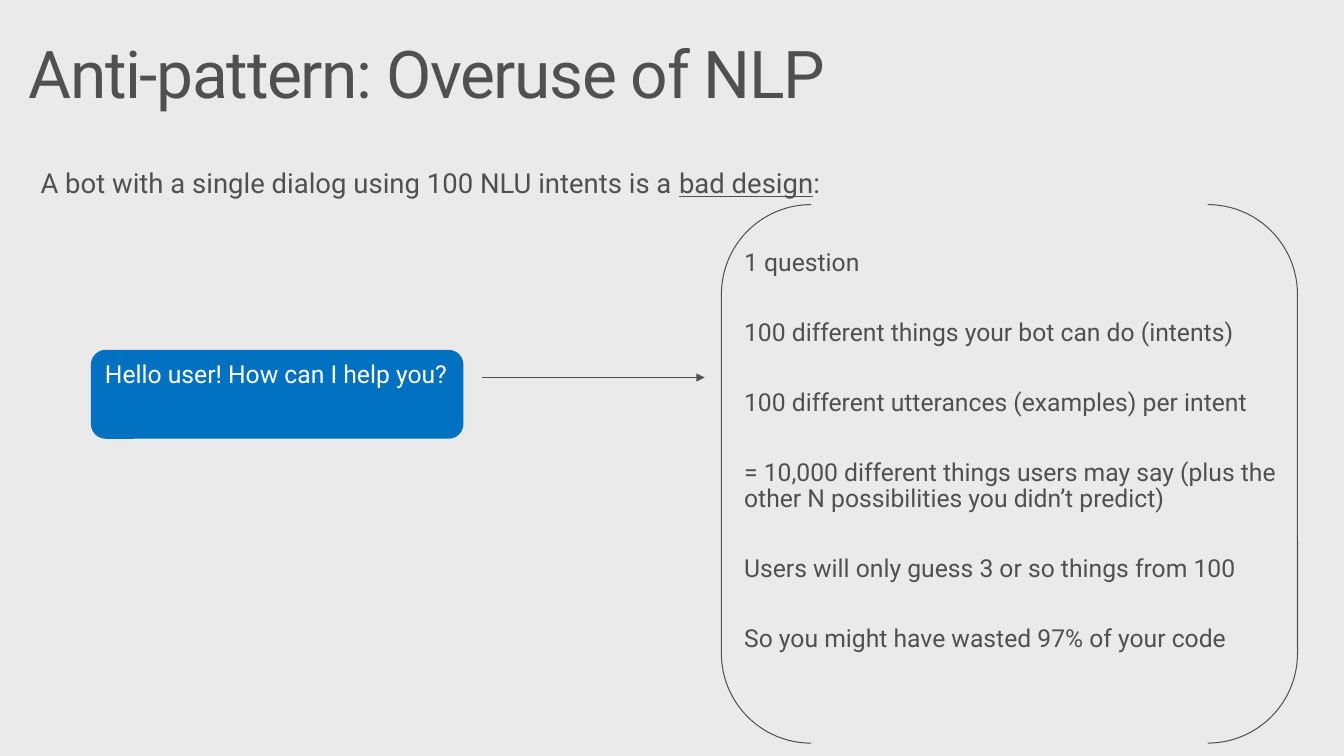
"""Build the slide on overusing natural language processing in bots."""
from dataclasses import dataclass

from pptx import Presentation
from pptx.dml.color import RGBColor
from pptx.enum.shapes import MSO_CONNECTOR, MSO_SHAPE
from pptx.enum.text import MSO_ANCHOR, PP_ALIGN
from pptx.oxml.ns import qn
from pptx.slide import Slide
from pptx.text.text import TextFrame
from pptx.util import Emu, Pt
from lxml.etree import SubElement

BACKGROUND = RGBColor(0xEA, 0xEA, 0xEA)
INK = RGBColor(0x50, 0x50, 0x50)
BLUE = RGBColor(0x00, 0x70, 0xC0)
WHITE = RGBColor(0xFF, 0xFF, 0xFF)
FONT = "Roboto"
EMU_PER_PX = 9144
LINE_WIDTH = Pt(0.75)


@dataclass(frozen=True)
class Box:
    """A rectangle in px."""
    left: int
    top: int
    width: int
    height: int


@dataclass(frozen=True)
class Run:
    """A piece of text with one style."""
    text: str
    underline: bool = False


@dataclass(frozen=True)
class TextBlock:
    """A text box with its paragraphs and style."""
    box: Box
    paragraphs: tuple[tuple[Run, ...], ...]
    size: int
    inset: tuple[int, int]
    space_after: float = 0
    tracking: int = 0


TEXT_BLOCKS = (
    TextBlock(Box(13, 32, 1300, 100), ((Run("Anti-pattern: Overuse of NLP"),),),
              size=48, inset=(16, 10), tracking=-100),
    TextBlock(Box(21, 157, 1265, 63),
              ((Run("A bot with a single dialog using 100 NLU intents is a "),
                Run("bad design", underline=True), Run(":")),),
              size=20, inset=(20, 16)),
    TextBlock(Box(733, 237, 581, 444),
              ((Run("1 question"),),
               (Run("100 different things your bot can do (intents)"),),
               (Run("100 different utterances (examples) per intent"),),
               (Run("= 10,000 different things users may say "
                    "(plus the other N possibilities you didn’t predict)"),),
               (Run("Users will only guess 3 or so things from 100"),),
               (Run("So you might have wasted 97% of your code"),)),
              size=18, inset=(20, 16), space_after=31.5),
)
GREETING_BOX = Box(92, 354, 377, 90)
BRACKET_BOX = Box(730, 207, 583, 545)
ARROW = Box(488, 382, 225, 0)


def px(length: int) -> Emu:
    """Turn px into EMU."""
    return Emu(length * EMU_PER_PX)


def place(box: Box) -> tuple[Emu, Emu, Emu, Emu]:
    """Give left, top, width and height in EMU."""
    return px(box.left), px(box.top), px(box.width), px(box.height)


def write(frame: TextFrame, paragraphs: tuple[tuple[Run, ...], ...], size: int,
          color: RGBColor, line_spacing: float = 1, space_after: float = 0,
          tracking: int = 0) -> None:
    """Fill a text frame run by run."""
    frame.word_wrap = True
    frame.vertical_anchor = MSO_ANCHOR.TOP
    for index, runs in enumerate(paragraphs):
        paragraph = frame.add_paragraph() if index else frame.paragraphs[0]
        paragraph.alignment = PP_ALIGN.LEFT
        paragraph.line_spacing = line_spacing
        paragraph.space_after = Pt(space_after)
        for part in runs:
            run = paragraph.add_run()
            run.text = part.text
            run.font.name = FONT
            run.font.size = Pt(size)
            run.font.color.rgb = color
            if part.underline:
                run.font.underline = True
            if tracking:
                run.font._element.set("spc", str(tracking))


def add_text_block(slide: Slide, block: TextBlock) -> None:
    """Draw one text box."""
    frame = slide.shapes.add_textbox(*place(block.box)).text_frame
    horizontal, vertical = block.inset
    frame.margin_left = frame.margin_right = px(horizontal)
    frame.margin_top = frame.margin_bottom = px(vertical)
    write(frame, block.paragraphs, block.size, INK, 0.9,
          block.space_after, block.tracking)


def add_greeting(slide: Slide, box: Box) -> None:
    """Draw the bot's greeting bubble."""
    shape = slide.shapes.add_shape(MSO_SHAPE.ROUNDED_RECTANGLE, *place(box))
    shape.shadow.inherit = False
    shape.fill.solid()
    shape.fill.fore_color.rgb = BLUE
    shape.line.fill.background()
    write(shape.text_frame, ((Run("Hello user! How can I help you?"),),), 18, WHITE)


def add_arrow(slide: Slide, box: Box) -> None:
    """Draw the arrow from the greeting to the list."""
    left, top, width, height = place(box)
    connector = slide.shapes.add_connector(
        MSO_CONNECTOR.STRAIGHT, left, top, left + width, top + height)
    connector.line.color.rgb = INK
    connector.line.width = LINE_WIDTH
    SubElement(connector.line._get_or_add_ln(), qn("a:tailEnd"), type="triangle")
    SubElement(connector._element.spPr, qn("a:effectLst"))


def add_brackets(slide: Slide, box: Box) -> None:
    """Draw the pair of brackets around the list."""
    shape = slide.shapes.add_shape(MSO_SHAPE.DOUBLE_BRACKET, *place(box))
    shape.shadow.inherit = False
    shape.fill.background()
    shape.line.color.rgb = INK
    shape.line.width = LINE_WIDTH


def main() -> None:
    """Build and save the presentation."""
    presentation = Presentation()
    presentation.slide_width = px(1360)
    presentation.slide_height = px(765)
    slide = presentation.slides.add_slide(presentation.slide_layouts[6])
    slide.background.fill.solid()
    slide.background.fill.fore_color.rgb = BACKGROUND
    for block in TEXT_BLOCKS:
        add_text_block(slide, block)
    add_greeting(slide, GREETING_BOX)
    add_arrow(slide, ARROW)
    add_brackets(slide, BRACKET_BOX)
    presentation.save("out.pptx")


if __name__ == "__main__":
    main()
